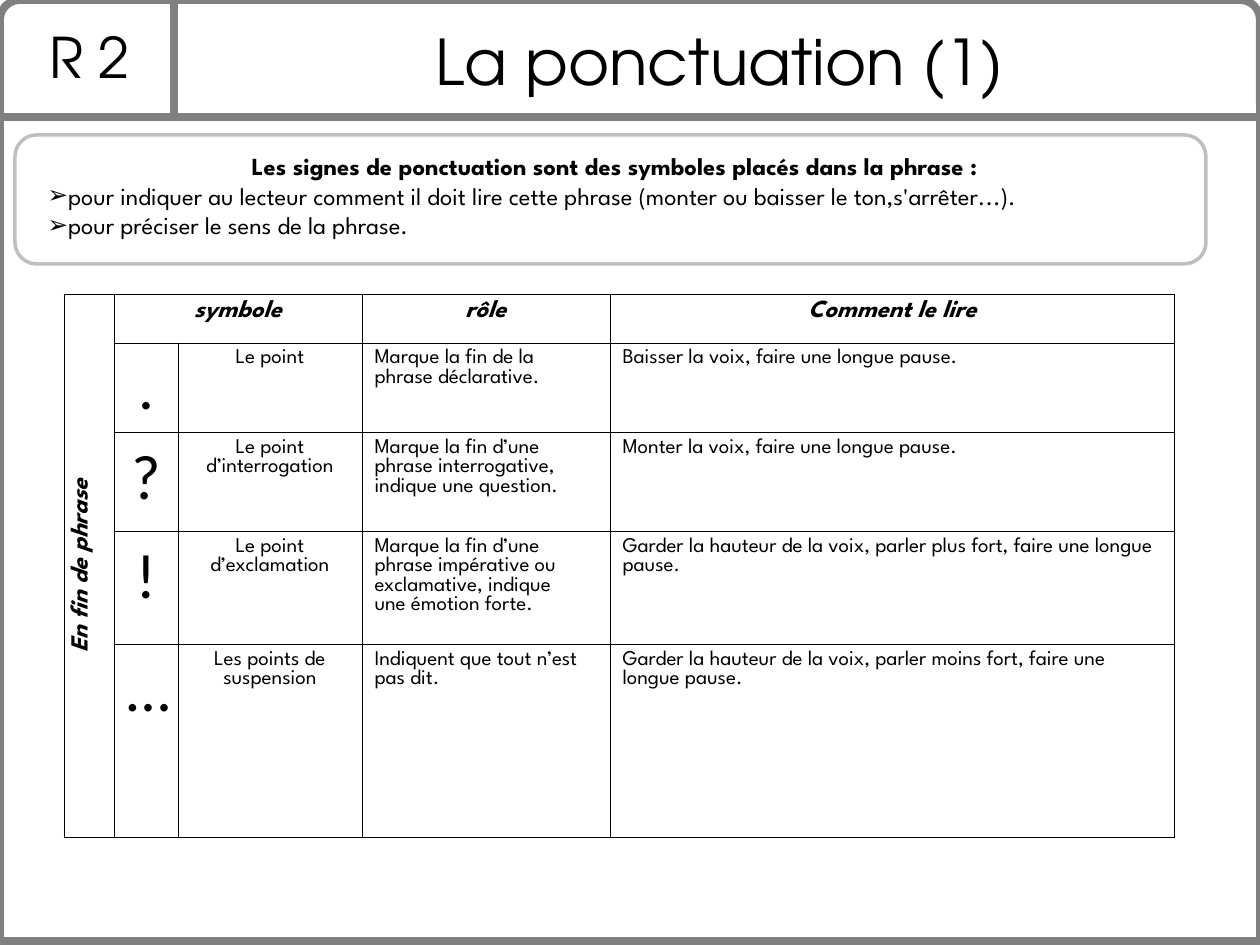
import pptx
import pptx.dml.color
import pptx.enum.shapes
import pptx.enum.text
import pptx.oxml
import pptx.oxml.ns
import pptx.util
from lxml import etree

SCALE = 914400 / 126
COLORS = {"ink": "000000", "frame": "808080", "panel": "BFBFBF", "paper": "FFFFFF"}
TITLE_FONT = "TeX Gyre Adventor"
BODY_FONT = "League Spartan"
SYMBOL_FONT = "Calibri"
SHAPES = pptx.enum.shapes.MSO_SHAPE
ALIGN = pptx.enum.text.PP_ALIGN
ANCHOR = pptx.enum.text.MSO_ANCHOR


def px(value):
    return pptx.util.Emu(round(value * SCALE))


def color(name):
    return pptx.dml.color.RGBColor.from_string(COLORS[name])


def write_text(frame, lines, *, size, font=BODY_FONT, align=ALIGN.LEFT,
               bold=False, italic=False, bullet=None, add=False):
    for index, line in enumerate(lines):
        para = frame.add_paragraph() if add or index else frame.paragraphs[0]
        properties = para._p.get_or_add_pPr()
        properties.set("marL", "0")
        properties.set("indent", "0")
        mark = etree.SubElement(properties, pptx.oxml.ns.qn("a:buChar" if bullet else "a:buNone"))
        if bullet:
            mark.set("char", bullet)
        para.alignment = align
        para.line_spacing = 1.0
        para.space_before = pptx.util.Pt(0)
        span = para.add_run()
        span.text = line
        span.font.name = font
        span.font.size = pptx.util.Pt(size)
        span.font.bold = bold
        span.font.italic = italic
        span.font.color.rgb = color("ink")


class LessonSlide:
    def __init__(self, deck):
        self.slide = deck.slides.add_slide(deck.slide_layouts[1])
        self.shapes = self.slide.shapes

    def panel(self, kind, bounds, line, width, fill=None):
        shape = self.shapes.add_shape(kind, *map(px, bounds))
        shape.shadow.inherit = False
        if fill:
            shape.fill.solid()
            shape.fill.fore_color.rgb = color(fill)
        else:
            shape.fill.background()
        shape.line.color.rgb = color(line)
        shape.line.width = pptx.util.Pt(width)

    def rule(self, start, end, line, width):
        connector = self.shapes.add_connector(
            pptx.enum.shapes.MSO_CONNECTOR.STRAIGHT, *map(px, start + end))
        connector.line.color.rgb = color(line)
        connector.line.width = pptx.util.Pt(width)
        etree.SubElement(connector.element.spPr, pptx.oxml.ns.qn("a:effectLst"))

    def prepare(self, box, anchor):
        frame = box.text_frame
        frame.word_wrap = True
        frame.auto_size = pptx.enum.text.MSO_AUTO_SIZE.NONE
        frame.vertical_anchor = anchor
        return frame

    def text(self, bounds):
        return self.prepare(self.shapes.add_textbox(*map(px, bounds)), ANCHOR.TOP)

    def placeholder(self, index, bounds, anchor=ANCHOR.TOP):
        box = self.slide.placeholders[index]
        box.left, box.top, box.width, box.height = map(px, bounds)
        box.element.getparent().append(box.element)
        return self.prepare(box, anchor)

    def border(self, cell):
        properties = cell._tc.get_or_add_tcPr()
        for side in ("lnL", "lnR", "lnT", "lnB"):
            properties.append(pptx.oxml.parse_xml(
                f'<a:{side} {pptx.oxml.ns.nsdecls("a")} w="6350"><a:solidFill>'
                f'<a:srgbClr val="{COLORS["ink"]}"/></a:solidFill></a:{side}>'))
        cell.fill.background()

    def table(self, left, top, columns, rows):
        bounds = (left, top, sum(columns), sum(rows))
        table = self.shapes.add_table(len(rows), len(columns), *map(px, bounds)).table
        table.first_row = False
        table.horz_banding = False
        for column, width in zip(table.columns, columns):
            column.width = px(width)
        for row, height in zip(table.rows, rows):
            row.height = px(height)
        for cell in table.iter_cells():
            self.border(cell)
        return table


def add_sign_table(page, signs):
    table = page.table(64, 294, [50, 64, 184, 248, 565], [49, 88, 99, 113, 193])
    table.cell(0, 0).merge(table.cell(4, 0))
    table.cell(0, 1).merge(table.cell(0, 2))
    table.cell(0, 0)._tc.get_or_add_tcPr().set("vert", "vert270")
    headings = {0: "En fin de phrase", 1: "symbole", 3: "rôle", 4: "Comment le lire"}
    for column, heading in headings.items():
        write_text(table.cell(0, column).text_frame, [heading], size=14,
                   align=ALIGN.CENTER, bold=True, italic=True)
    formats = [
        {"size": 36, "font": SYMBOL_FONT, "align": ALIGN.CENTER},
        {"size": 12, "align": ALIGN.CENTER},
        {"size": 12},
        {"size": 12},
    ]
    for row, sign in enumerate(signs, 1):
        for column, (content, style) in enumerate(zip(sign, formats), 1):
            write_text(table.cell(row, column).text_frame, content.split("\n"), **style)


def main():
    deck = pptx.Presentation()
    deck.slide_width, deck.slide_height = px(1260), px(945)
    page = LessonSlide(deck)
    page.panel(SHAPES.ROUND_2_SAME_RECTANGLE, (0, 0, 1260, 117), "frame", 4.5)
    page.panel(SHAPES.RECTANGLE, (0, 117, 1260, 824), "frame", 4.5)
    page.rule((174, -1), (174, 117), "frame", 4.5)
    write_text(page.text((15, 16, 149, 81)), ["R 2"], size=32,
               font=TITLE_FONT, align=ALIGN.CENTER)
    write_text(page.placeholder(0, (194, 16, 1052, 89), ANCHOR.MIDDLE),
               ["La ponctuation (1)"], size=36, font=TITLE_FONT, align=ALIGN.CENTER)
    page.panel(SHAPES.ROUNDED_RECTANGLE, (15, 135, 1191, 129), "panel", 2, "paper")
    rules = page.placeholder(1, (35, 145, 1160, 102))
    write_text(rules, ["Les signes de ponctuation sont des symboles placés dans la phrase :"],
               size=14, align=ALIGN.CENTER, bold=True)
    write_text(rules, [
        "pour indiquer au lecteur comment il doit lire cette phrase "
        "(monter ou baisser le ton,s'arrêter...).",
        "pour préciser le sens de la phrase.",
    ], size=14, bullet="➢", add=True)
    add_sign_table(page, [
        (".", "Le point", "Marque la fin de la\nphrase déclarative.",
         "Baisser la voix, faire une longue pause."),
        ("?", "Le point d’interrogation",
         "Marque la fin d’une\nphrase interrogative,\nindique une question.",
         "Monter la voix, faire une longue pause."),
        ("!", "Le point d’exclamation",
         "Marque la fin d’une\nphrase impérative ou\nexclamative, indique\nune émotion forte.",
         "Garder la hauteur de la voix, parler plus fort, faire une longue pause."),
        ("…", "Les points de suspension", "Indiquent que tout n’est pas dit.",
         "Garder la hauteur de la voix, parler moins fort, faire une longue pause."),
    ])
    deck.save("out.pptx")


if __name__ == "__main__":
    main()
